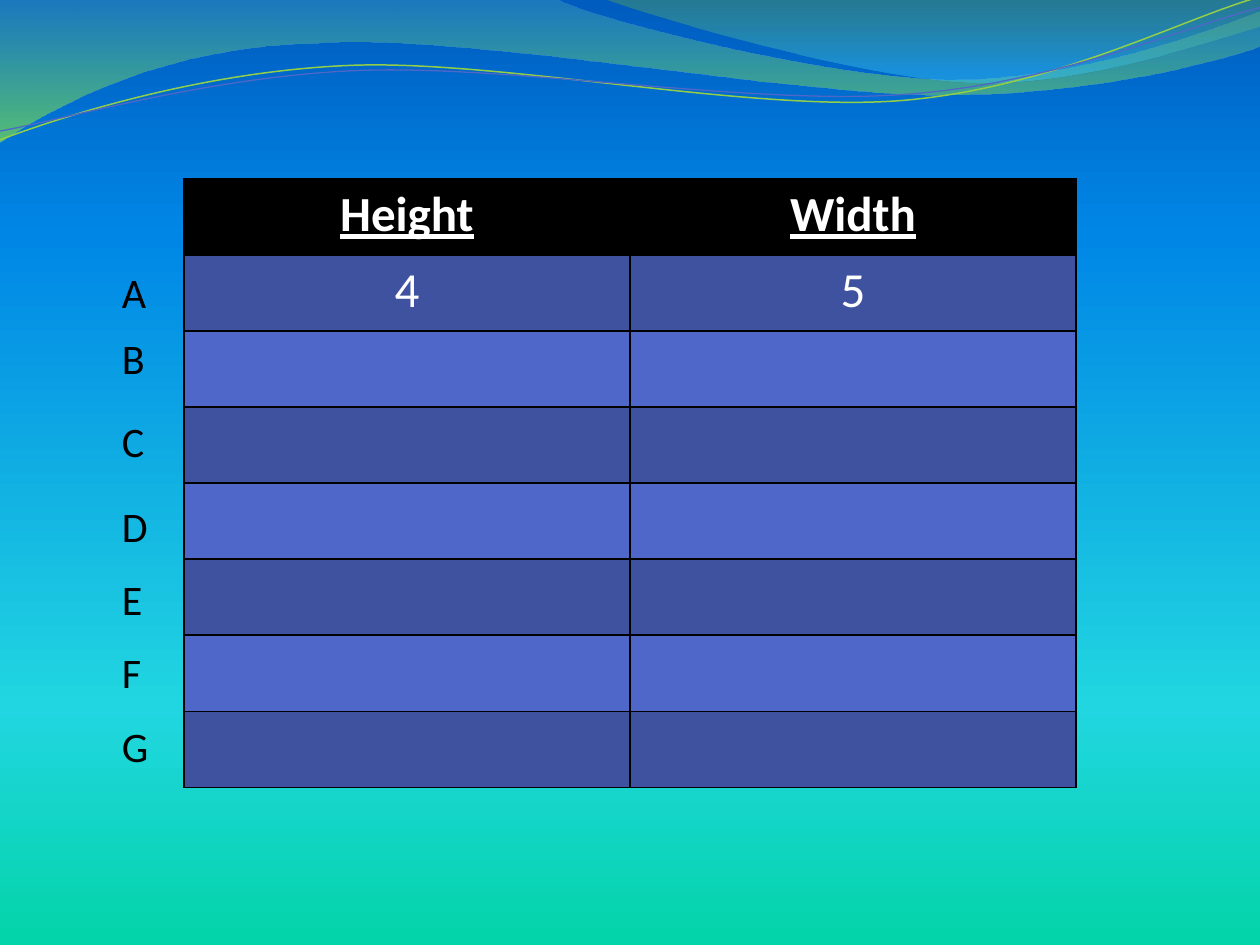
import math

from pptx import Presentation
from pptx import util as u
from pptx.dml.color import RGBColor
from pptx.enum import text
from pptx.oxml import parse_xml
from pptx.oxml.ns import nsdecls

SKY = [(0, "03D4A8", 100), (25, "21D6E0", 100), (75, "0087E6", 100), (100, "005CBF", 100)]
WAVES = [
    {"box": (-0.01, -0.01, 10.02, 1.14), "stops": [(0, "3B9CBF", 45), (100, "9CFA24", 55)],
     "start": (0, 0),
     "steps": [[(4.4, -0.01)],
               [(4.76, 0.17), (6.64, 0.63), (7.58, 0.63)],
               [(8.53, 0.63), (9.58, 0.26), (10, 0.09)], [(10.01, 0.36)],
               [(9.83, 0.44), (8.7, 0.76), (7.46, 0.75)],
               [(6.22, 0.75), (3.82, 0.28), (2.57, 0.34)],
               [(1.29, 0.36), (0.46, 0.83), (-0.01, 1.13)]]},
    {"box": (4.79, -0.01, 5.21, 0.7), "stops": [(0, "7EBE2C", 30), (80, "39C1F1", 45)],
     "start": (4.79, -0.01),
     "steps": [[(5.09, 0.11), (6.82, 0.62), (7.69, 0.65)],
               [(8.56, 0.69), (9.61, 0.32), (10, 0.21)], [(10, 0)]]},
    {"box": (-0.02, 0.22, 10.02, 0.71), "line": ("93CE48", 0.85), "turn": -2.7,
     "start": (0, 1.11),
     "steps": [[(0.48, 0.93), (1.58, 0.57), (2.77, 0.52)],
               [(3.95, 0.47), (5.93, 0.89), (7.13, 0.8)],
               [(8.33, 0.71), (9.38, 0.15), (9.98, -0.02)]]},
    {"box": (-0.02, 0.3, 10.03, 0.58), "line": ("4E67C8", 0.75), "turn": -2.7,
     "start": (0, 1.04),
     "steps": [[(0.47, 0.96), (1.64, 0.61), (2.83, 0.56)],
               [(4.03, 0.51), (5.97, 0.84), (7.17, 0.75)],
               [(8.36, 0.67), (9.41, 0.21), (10, 0.06)]]},
]
ROWS = [("Height", "Width"), ("4", "5")] + [("", "")] * 6
HEADER_FILL, BAND_FILLS = "000000", ("4E67C8", "3E52A0")
LABELS = {"A": 2.07, "B": 2.59, "C": 3.25, "D": 3.92, "E": 4.5, "F": 5.08, "G": 5.67}
TABLE_BOX = (1.46, 1.42, 7.08, 4.83)


def color(value):
    return RGBColor.from_string(value)


def inches(values):
    return [u.Inches(value) for value in values]


def set_gradient(fill, owner, stops, angle):
    fill.gradient()
    fill.gradient_angle = angle
    stop_list = owner.xpath(".//a:gsLst")[0]
    for stop in list(stop_list):
        stop_list.remove(stop)
    for position, value, opacity in stops:
        stop_list.append(parse_xml(
            f'<a:gs {nsdecls("a")} pos="{position * 1000}"><a:srgbClr val="{value}">'
            f'<a:alpha val="{opacity * 1000}"/></a:srgbClr></a:gs>'))


def unturn(point, box, degrees):
    left, top, width, height = box
    dx, dy = point[0] - left - width / 2, point[1] - top - height / 2
    angle = math.radians(-degrees)
    return (dx * math.cos(angle) - dy * math.sin(angle) + width / 2,
            dx * math.sin(angle) + dy * math.cos(angle) + height / 2)


def set_curves(shape, wave, turn):
    outline = shape._element.xpath(".//a:path")[0]
    outline.set("w", str(shape.width))
    outline.set("h", str(shape.height))
    for old in outline.xpath("./a:moveTo | ./a:lnTo"):
        outline.remove(old)
    for index, step in enumerate([[wave["start"]]] + wave["steps"]):
        tag = "moveTo" if index == 0 else "cubicBezTo" if len(step) == 3 else "lnTo"
        points = [inches(unturn(point, wave["box"], turn)) for point in step]
        marks = "".join(f'<a:pt x="{x}" y="{y}"/>' for x, y in points)
        outline.insert(index, parse_xml(f'<a:{tag} {nsdecls("a")}>{marks}</a:{tag}>'))


def add_wave(slide, wave):
    turn = wave.get("turn", 0)
    builder = slide.shapes.build_freeform(*inches(wave["start"]))
    builder.add_line_segments([inches(step[-1]) for step in wave["steps"]], close="stops" in wave)
    shape = builder.convert_to_shape()
    shape.left, shape.top, shape.width, shape.height = inches(wave["box"])
    shape.rotation = turn
    set_curves(shape, wave, turn)
    shape.shadow.inherit = False
    if "stops" in wave:
        set_gradient(shape.fill, shape._element, wave["stops"], 270)
        shape.line.fill.background()
    else:
        line_color, width = wave["line"]
        shape.fill.background()
        shape.line.color.rgb = color(line_color)
        shape.line.width = u.Pt(width)


def set_font(paragraph, size, value):
    paragraph.font.name = "Calibri"
    paragraph.font.size = u.Pt(size)
    paragraph.font.color.rgb = color(value)


def add_borders(cell):
    properties = cell._tc.get_or_add_tcPr()
    for side in "LRTB":
        properties.append(parse_xml(
            f'<a:ln{side} {nsdecls("a")} w="12700"><a:solidFill>'
            f'<a:srgbClr val="000000"/></a:solidFill></a:ln{side}>'))


def add_measurements(slide):
    table = slide.shapes.add_table(len(ROWS), len(ROWS[0]), *inches(TABLE_BOX)).table
    table.first_row = table.horz_banding = False
    for r, values in enumerate(ROWS):
        for c, value in enumerate(values):
            cell = table.cell(r, c)
            add_borders(cell)
            cell.fill.solid()
            cell.fill.fore_color.rgb = color(BAND_FILLS[r % 2] if r else HEADER_FILL)
            if value:
                cell.text = value
                paragraph = cell.text_frame.paragraphs[0]
                paragraph.alignment = text.PP_ALIGN.CENTER
                set_font(paragraph, 28, "FFFFFF")
                paragraph.font.bold = paragraph.font.underline = r == 0


def add_label(slide, letter, top):
    frame = slide.shapes.add_textbox(*inches((0.87, top, 0.5, 0.5))).text_frame
    frame.word_wrap = True
    frame.auto_size = text.MSO_AUTO_SIZE.SHAPE_TO_FIT_TEXT
    frame.text = letter
    set_font(frame.paragraphs[0], 24, "000000")


def main():
    """Build the height and width table slide."""
    deck = Presentation()
    deck.slide_width, deck.slide_height = inches((10, 7.5))
    slide = deck.slides.add_slide(deck.slide_layouts[6])
    set_gradient(slide.background.fill, slide._element, SKY, 90)
    for wave in WAVES:
        add_wave(slide, wave)
    add_measurements(slide)
    for letter, top in LABELS.items():
        add_label(slide, letter, top)
    deck.save("out.pptx")


if __name__ == "__main__":
    main()
